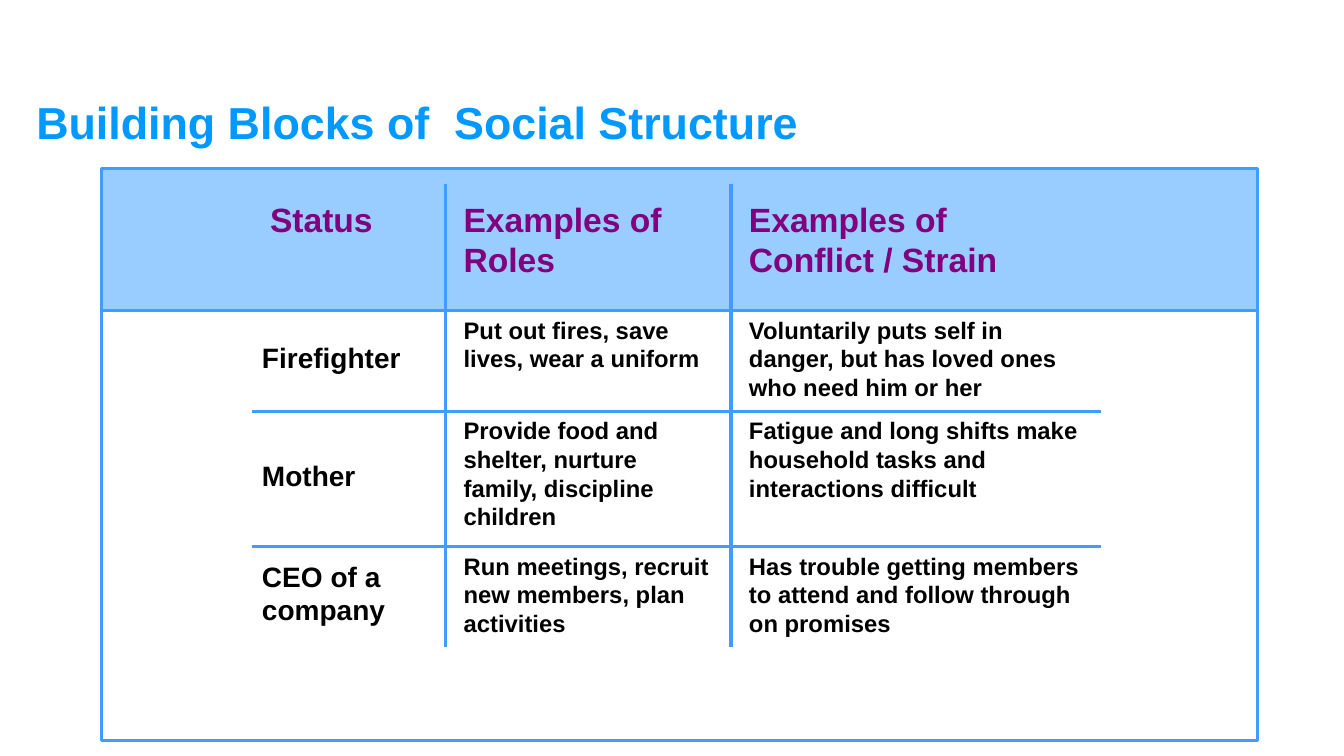
import pptx
import pptx.util
import pptx.dml.color
import pptx.enum.shapes
import pptx.enum.text
import pptx.oxml.ns
from lxml import etree

Inches, Pt = pptx.util.Inches, pptx.util.Pt

TITLE = "Building Blocks of  Social Structure"
HEADINGS = ["Status", "Examples of Roles", "Examples of \vConflict / Strain"]
# status, top of its label, roles, conflict
ROWS = [
    ("Firefighter", 3.33, "Put out fires, save lives, wear a uniform",
     "Voluntarily puts self in danger, but has loved ones who need him or her"),
    ("Mother", 4.5, "Provide food and shelter, nurture family, discipline children",
     "Fatigue and long shifts make household tasks and interactions difficult"),
    ("CEO of a company", 5.5, "Run meetings, recruit new members, plan activities",
     "Has trouble getting members to attend and follow through on promises"),
]
COLORS = {"title": "0099FF", "heading": "800080", "body": "000000",
          "line": "429CFF", "band": "99CCFF", "panel": "FFFFFF"}
FONT = "Arial"
LINE_WIDTH = Pt(2.25)

PANEL_LEFT, PANEL_WIDTH = 1.01, 11.46
PANELS = [(1.67, 4.67, "band"), (3.08, 4.27, "panel")]  # top, height, fill
GRID_LEFT, GRID_RIGHT = 2.5, 10.92
GRID_TOP, GRID_BOTTOM = 1.83, 6.42
DIVIDERS = [4.42, 7.25]
ROW_TOPS = [3.08, 4.08, 5.42]
COLUMN_EDGES = [GRID_LEFT, *DIVIDERS, GRID_RIGHT]
GUTTER = 0.08
HEADING_TOP = 1.92
LINE_HEIGHTS = {24: 0.41, 20: 0.34, 17: 0.29}


def rgb(name):
    return pptx.dml.color.RGBColor.from_string(COLORS[name])


def write(frame, text, size, color):
    frame.text = text
    frame.word_wrap = True
    for paragraph in frame.paragraphs:
        paragraph.alignment = pptx.enum.text.PP_ALIGN.LEFT
        for run in paragraph.runs:
            run.font.name = FONT
            run.font.size = Pt(size)
            run.font.bold = True
            run.font.color.rgb = rgb(color)


def add_panel(slide, top, height, fill):
    panel = slide.shapes.add_shape(
        pptx.enum.shapes.MSO_SHAPE.ROUNDED_RECTANGLE,
        Inches(PANEL_LEFT), Inches(top), Inches(PANEL_WIDTH), Inches(height))
    panel.adjustments[0] = 0
    panel.shadow.inherit = False
    panel.fill.solid()
    panel.fill.fore_color.rgb = rgb(fill)
    panel.line.color.rgb = rgb("line")
    panel.line.width = LINE_WIDTH


def add_rule(slide, *ends):
    rule = slide.shapes.add_connector(
        pptx.enum.shapes.MSO_CONNECTOR.STRAIGHT, *map(Inches, ends))
    rule.line.color.rgb = rgb("line")
    rule.line.width = LINE_WIDTH
    etree.SubElement(rule._element.spPr, pptx.oxml.ns.qn("a:effectLst"))


def add_entry(slide, text, left, top, width, size, color, lines):
    height = 0.1 + lines * LINE_HEIGHTS[size]
    entry = slide.shapes.add_textbox(
        Inches(left), Inches(top), Inches(width), Inches(height))
    write(entry.text_frame, text, size, color)
    entry.text_frame.auto_size = pptx.enum.text.MSO_AUTO_SIZE.SHAPE_TO_FIT_TEXT


def main():
    deck = pptx.Presentation()
    deck.slide_width, deck.slide_height = Inches(13.33), Inches(7.5)
    slide = deck.slides.add_slide(deck.slide_layouts[5])

    title = slide.shapes.title
    title.left, title.top = Inches(0.26), Inches(0.75)
    title.width, title.height = Inches(12.21), Inches(0.92)
    write(title.text_frame, TITLE, 32, "title")
    title.text_frame.vertical_anchor = pptx.enum.text.MSO_ANCHOR.MIDDLE

    for top, height, fill in PANELS:
        add_panel(slide, top, height, fill)
    for x in DIVIDERS:
        add_rule(slide, x, GRID_TOP, x, GRID_BOTTOM)
    for y in ROW_TOPS[1:]:
        add_rule(slide, GRID_LEFT, y, GRID_RIGHT, y)

    columns = [(left + GUTTER, right - left - 2 * GUTTER)
               for left, right in zip(COLUMN_EDGES, COLUMN_EDGES[1:])]
    for (left, width), heading, lines in zip(columns, HEADINGS, [1, 2, 2]):
        add_entry(slide, heading, left, HEADING_TOP, width, 24, "heading", lines)

    status_width = DIVIDERS[0] - GRID_LEFT
    for row_top, (status, status_top, *examples) in zip(ROW_TOPS, ROWS):
        status_lines = 2 if " " in status else 1
        add_entry(slide, status, GRID_LEFT, status_top, status_width,
                  20, "body", status_lines)
        for (left, width), example in zip(columns[1:], examples):
            lines = -(-len(example) // (18 if left < DIVIDERS[1] else 26))
            add_entry(slide, example, left, row_top, width, 17, "body", lines)

    deck.save("out.pptx")


if __name__ == "__main__":
    main()
